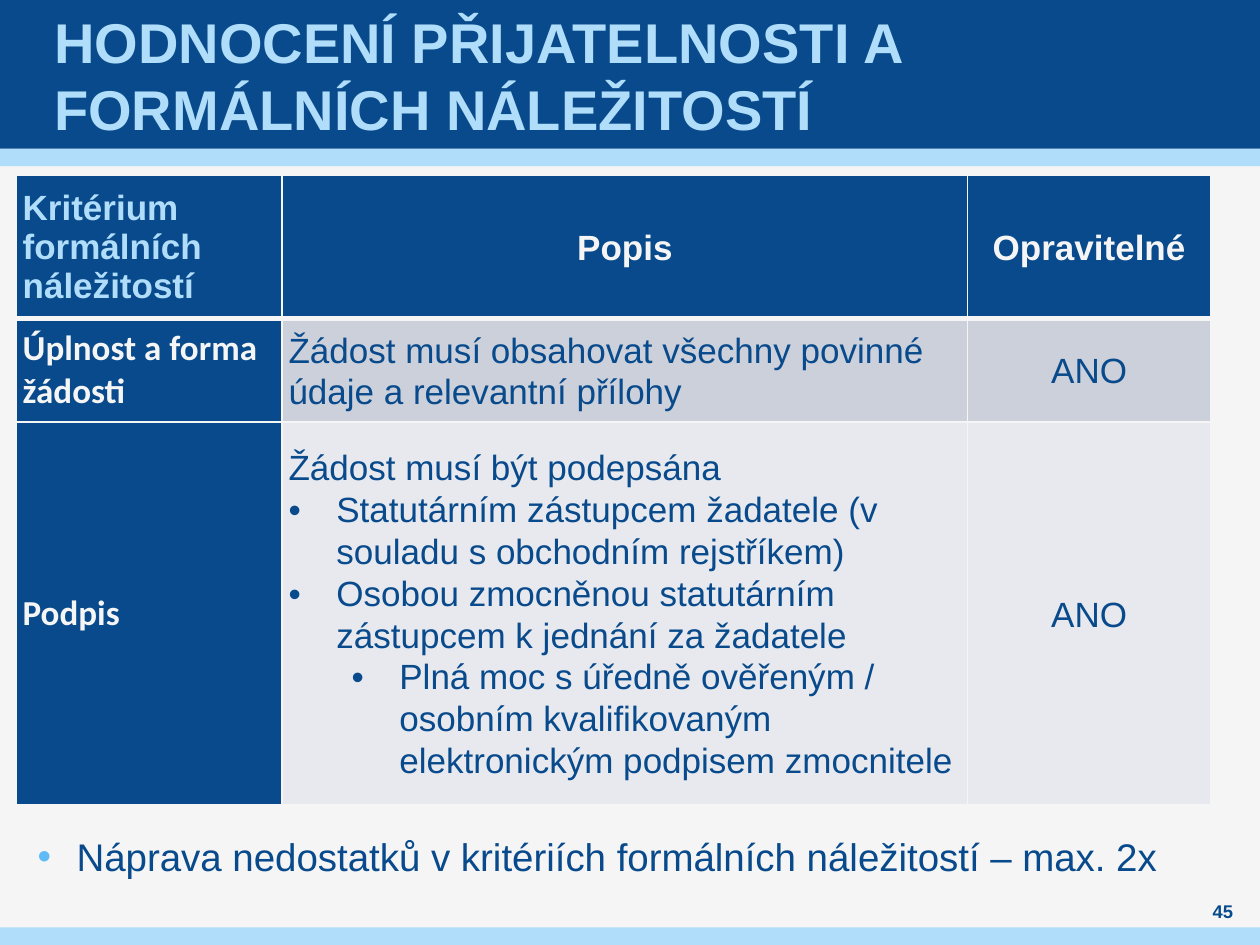
"""Build the slide on formal-requirement criteria with python-pptx."""
from lxml import etree
from pptx import Presentation
from pptx.dml.color import RGBColor
from pptx.enum.shapes import MSO_SHAPE
from pptx.enum.text import MSO_ANCHOR, PP_ALIGN
from pptx.oxml.ns import qn
from pptx.util import Inches, Pt

RECT = MSO_SHAPE.RECTANGLE
MIDDLE = MSO_ANCHOR.MIDDLE
LEFT, CENTER = PP_ALIGN.LEFT, PP_ALIGN.CENTER
COLORS = {
    "navy": "084A8B", "sky": "AFDDFA", "paper": "F5F5F5",
    "band": "CCD0DA", "pale": "E7E9EE", "bullet": "5FBBF5",
}
RGB = {name: RGBColor.from_string(value) for name, value in COLORS.items()}


def style(p, size, color, bold=False, font="Arial", align=LEFT, spacing=None, before=0, after=0):
    p.alignment = align
    p.line_spacing = spacing
    p.space_before, p.space_after = Pt(before), Pt(after)
    for r in p.runs:
        r.font.size, r.font.name, r.font.bold = Pt(size), font, bold
        r.font.color.rgb = RGB[color]


def bullet(p, margin, hang, color):
    pPr = p._p.get_or_add_pPr()
    pPr.set("marL", str(Inches(margin)))
    pPr.set("indent", str(-Inches(hang)))
    clr = etree.SubElement(pPr, qn("a:buClr"))
    etree.SubElement(clr, qn("a:srgbClr"), val=COLORS[color])
    etree.SubElement(pPr, qn("a:buFont"), typeface="Arial")
    etree.SubElement(pPr, qn("a:buChar"), char="•")


prs = Presentation()
prs.slide_width, prs.slide_height = Inches(10), Inches(7.5)
W, H = prs.slide_width, prs.slide_height
COL, ROW = W / 100, H / 75
s = prs.slides.add_slide(prs.slide_layouts[6])
s.background.fill.solid()
s.background.fill.fore_color.rgb = RGB["paper"]

for top, height, color in [(11.8, 1.4, "sky"), (0, 11.8, "navy"), (73.6, 1.4, "sky")]:
    band = s.shapes.add_shape(RECT, 0, int(top * ROW), W, int(height * ROW))
    band.shadow.inherit = False
    band.fill.solid()
    band.fill.fore_color.rgb = RGB[color]
    band.line.fill.background()

texts = [
    ("HODNOCENÍ PŘIJATELNOSTI A FORMÁLNÍCH NÁLEŽITOSTÍ",
     (3.9, 0, 92.1, 11.8), (0.4, 0), 32, "sky", True, LEFT),
    ("45", (94.5, 71.3, 5.1, 2), (0, 0), 10.5, "navy", True, CENTER),
    ("Náprava nedostatků v kritériích formálních náležitostí – max. 2x",
     (2, 65.6, 93.2, 4.7), (1, 0.5), 22, "navy", False, LEFT),
]
for text, (x, y, w, h), (side, edge), size, color, bold, align in texts:
    box = s.shapes.add_textbox(int(x * COL), int(y * ROW), int(w * COL), int(h * ROW))
    tf = box.text_frame
    tf.word_wrap = True
    tf.vertical_anchor = MIDDLE
    tf.margin_left = tf.margin_right = int(side * COL)
    tf.margin_top = tf.margin_bottom = int(edge * ROW)
    tf.text = text
    style(tf.paragraphs[0], size, color, bold, align=align)
bullet(tf.paragraphs[0], 0.31, 0.31, "bullet")

rows = [
    ["Kritérium formálních náležitostí", "Popis", "Opravitelné"],
    ["Úplnost a forma žádosti",
     "Žádost musí obsahovat všechny povinné údaje a relevantní přílohy", "ANO"],
    ["Podpis",
     "Žádost musí být podepsána\n"
     "Statutárním zástupcem žadatele (v souladu s obchodním rejstříkem)\n"
     "Osobou zmocněnou statutárním zástupcem k jednání za žadatele\n"
     "Plná moc s úředně ověřeným / osobním kvalifikovaným elektronickým podpisem zmocnitele",
     "ANO"],
]
widths, heights = [21.1, 54.4, 19.3], [11.4, 8.2, 30.4]
indents = [0, 0.38, 0.38, 0.88]
table = s.shapes.add_table(3, 3, int(1.3 * COL), int(13.9 * ROW),
                           int(sum(widths) * COL), int(sum(heights) * ROW)).table
for column, width in zip(table.columns, widths):
    column.width = int(width * COL)
for row, height in zip(table.rows, heights):
    row.height = int(height * ROW)

for i, row in enumerate(rows):
    for j, text in enumerate(row):
        cell = table.cell(i, j)
        tcPr = cell._tc.get_or_add_tcPr()
        for side in "LRTB":
            thick = (i, side) in [(0, "B"), (1, "T")]
            ln = etree.SubElement(tcPr, qn("a:ln" + side), w=str(Pt(3 if thick else 1)))
            fill = etree.SubElement(ln, qn("a:solidFill"))
            etree.SubElement(fill, qn("a:srgbClr"), val=COLORS["paper"])
        dark = i == 0 or j == 0
        cell.fill.solid()
        cell.fill.fore_color.rgb = RGB["navy" if dark else ("band" if i == 1 else "pale")]
        cell.vertical_anchor = MIDDLE
        cell.margin_left = cell.margin_right = int(0.5 * COL)
        cell.margin_top = cell.margin_bottom = int(0.5 * ROW)
        cell.text_frame.text = text
        paragraphs = cell.text_frame.paragraphs
        centered = j == 2 or (i == 0 and j == 1)
        label = j == 0 and i > 0
        color = "sky" if i == j == 0 else "paper" if dark else "navy"
        for p, indent in zip(paragraphs, indents):
            style(p, 20, color, dark, "Calibri" if label else "Arial",
                  CENTER if centered else LEFT, 1.07 if j else None,
                  3 if label else 0, 3 if label else 8 if len(paragraphs) == 1 else 0)
            if indent:
                p.level = int(indent > 0.5)
                bullet(p, indent, 0.38, "navy")

prs.save("out.pptx")
